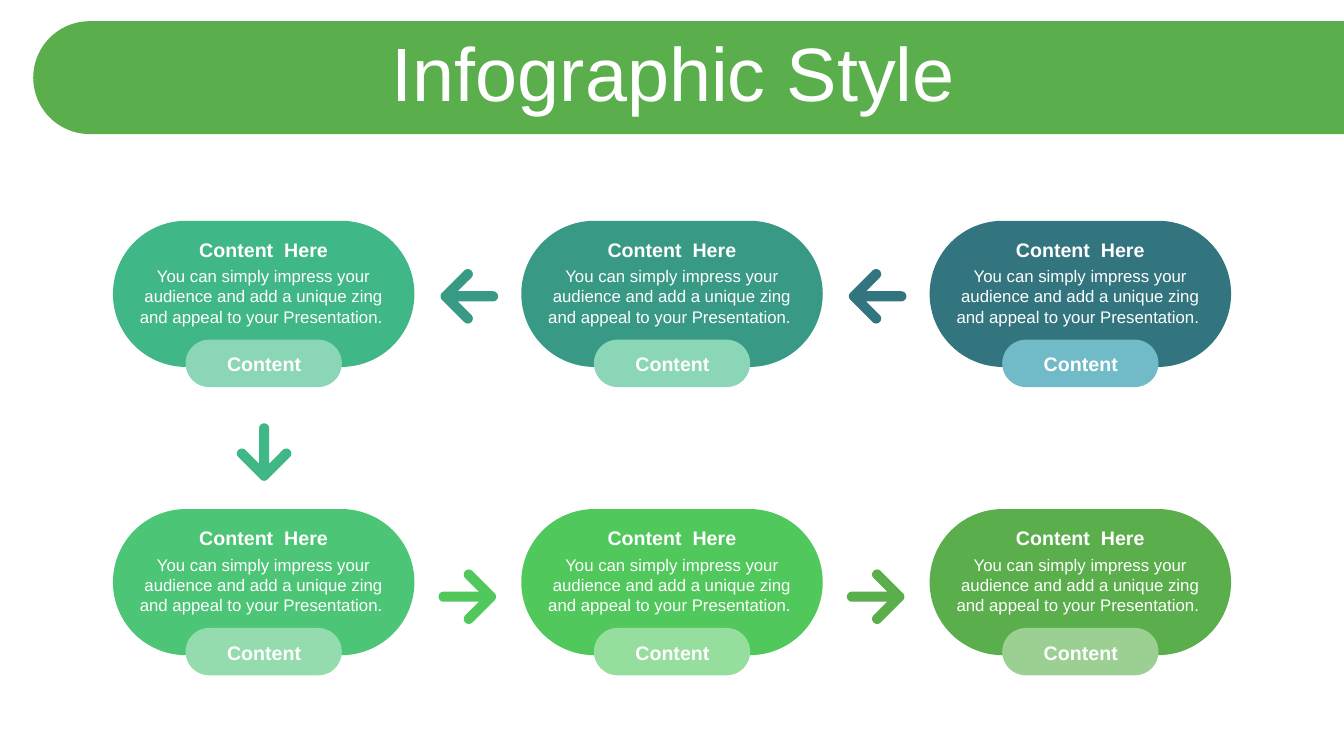
import math
import pptx
import pptx.util
import pptx.dml.color
import pptx.enum.shapes
import pptx.enum.text

KIND = pptx.enum.shapes.MSO_SHAPE
FIT = pptx.enum.text.MSO_AUTO_SIZE
MID = pptx.enum.text.MSO_ANCHOR.MIDDLE
TOP = pptx.enum.text.MSO_ANCHOR.TOP
CENTER = pptx.enum.text.PP_ALIGN.CENTER

SCALE = 9144
WIDE, HIGH = 1333, 750
FONT, WHITE, GREEN = "Arial", "FFFFFF", "5AAE4C"

TITLE = "Infographic Style"
HEAD = "Content  Here"
BODY = "You can simply impress your audience and add a unique zing and appeal to your Presentation. "
LABEL = "Content"

LEFT, STEP = 112, 405
ROWS = [
    (219, [("40B786", "8AD6B7"), ("389985", "8AD6B7"), ("32757F", "70BBC7")]),
    (505, [("4CC576", "94DCAD"), ("50C85B", "96DE9D"), (GREEN, "9BD092")]),
]
PARTS = [
    (LABEL, (100, 125, 100, 34), 14, True, MID),
    (BODY, (16, 40, 267, 71), 12, False, TOP),
    (HEAD, (14, 12, 271, 34), 14, True, TOP),
]
ARROWS = [
    (465, 294, 180, "389985"),
    (870, 294, 180, "32757F"),
    (262, 449, 90, "40B786"),
    (464, 592, 0, "50C85B"),
    (869, 592, 0, GREEN),
]
CAPS = [
    (1, -22, 5, 135, 315),
    (23, 0, 5, -45, 45),
    (1, 22, 5, 45, 225),
    (11, 5, 0, 0, 0),
    (-24, 0, 5, 90, 270),
    (11, -5, 0, 0, 0),
]


def emu(px):
    return pptx.util.Emu(round(px * SCALE))


def color(code):
    return pptx.dml.color.RGBColor.from_string(code)


def paint(shape, code):
    shape.shadow.inherit = False
    shape.fill.solid()
    shape.fill.fore_color.rgb = color(code)
    shape.line.fill.background()


def add_form(shapes, kind, box, code, bends):
    shape = shapes.add_shape(kind, *map(emu, box))
    for i, bend in enumerate(bends):
        shape.adjustments[i] = bend
    paint(shape, code)
    return shape


def write(shape, text, size, bold, anchor, fit):
    frame = shape.text_frame
    frame.word_wrap = True
    frame.auto_size = fit
    frame.vertical_anchor = anchor
    para = frame.paragraphs[0]
    para.alignment = CENTER
    run = para.add_run()
    run.text = text
    run.font.name = FONT
    run.font.size = pptx.util.Pt(size)
    run.font.bold = bold
    run.font.color.rgb = color(WHITE)
    return para


def add_card(slide, x, y, fill, tint):
    shapes = slide.shapes.add_group_shape().shapes
    add_form(shapes, KIND.ROUNDED_RECTANGLE, (x, y, 299, 145), fill, [0.5])
    add_form(shapes, KIND.ROUNDED_RECTANGLE, (x + 72, y + 118, 155, 47), tint, [0.5])
    for text, (dx, dy, w, h), size, bold, anchor in PARTS:
        box = shapes.add_textbox(*map(emu, (x + dx, y + dy, w, h)))
        write(box, text, size, bold, anchor, FIT.SHAPE_TO_FIT_TEXT)


def add_arrow(slide, x, y, turn, code):
    cos, sin = math.cos(math.radians(turn)), math.sin(math.radians(turn))
    points = []
    for cx, cy, r, start, end in CAPS:
        count = 12 if r else 0
        for i in range(count + 1):
            angle = math.radians(start + (end - start) * i / max(count, 1))
            px, py = cx + r * math.cos(angle), cy + r * math.sin(angle)
            points.append((emu(x + px * cos - py * sin), emu(y + px * sin + py * cos)))
    form = slide.shapes.build_freeform(*points[0], scale=1.0)
    form.add_line_segments(points[1:], close=True)
    paint(form.convert_to_shape(), code)


def add_title(slide):
    title = slide.shapes.title
    title.left, title.top, title.width, title.height = map(emu, (35, 37, 1266, 79))
    para = write(title, TITLE, 54, False, MID, FIT.NONE)
    para.line_spacing = 0.9
    para.space_before = pptx.util.Pt(10)
    band = add_form(slide.shapes, KIND.ROUND_2_SAME_RECTANGLE,
                    (627, -573, 112, 1300), GREEN, [0.5, 0])
    band.rotation = 270
    title.element.addprevious(band.element)


def main():
    deck = pptx.Presentation()
    deck.slide_width, deck.slide_height = emu(WIDE), emu(HIGH)
    slide = deck.slides.add_slide(deck.slide_layouts[5])
    add_title(slide)
    for y, cards in ROWS:
        for i, (fill, tint) in enumerate(cards):
            add_card(slide, LEFT + i * STEP, y, fill, tint)
    for arrow in ARROWS:
        add_arrow(slide, *arrow)
    deck.save("out.pptx")


if __name__ == "__main__":
    main()
